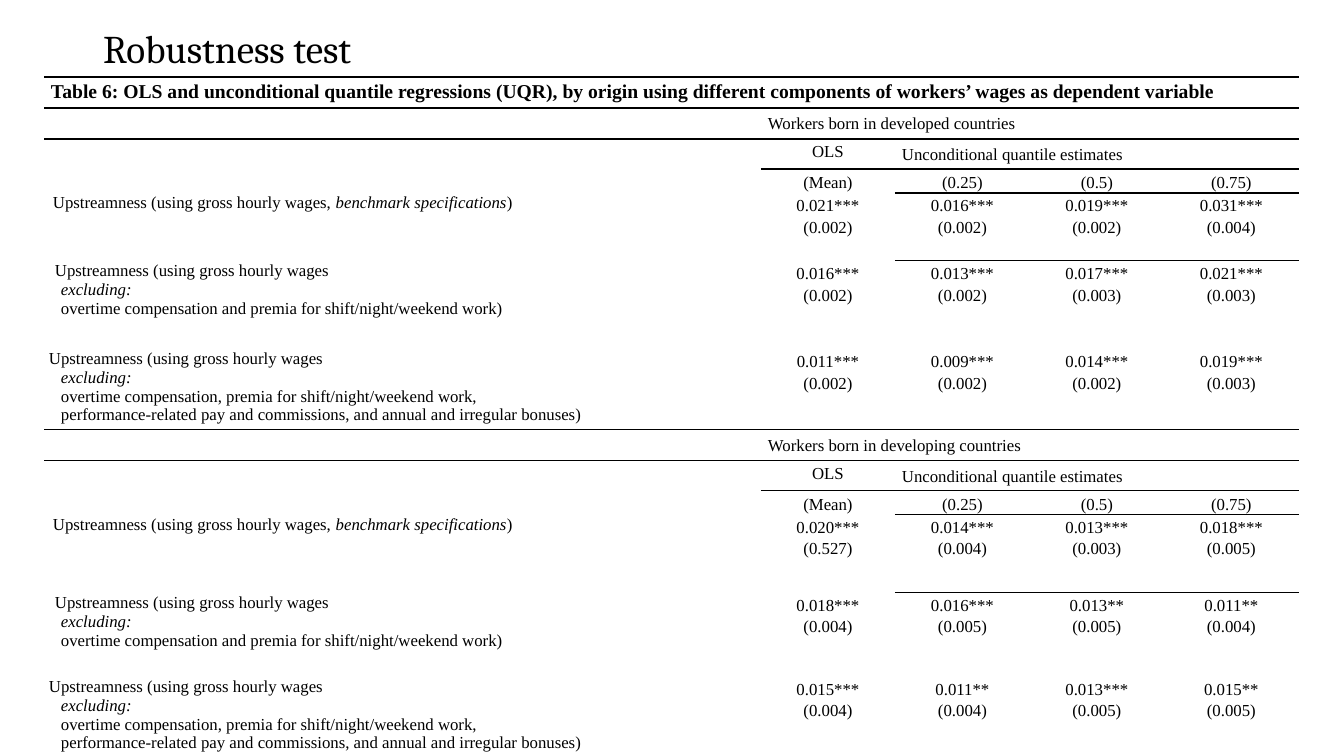
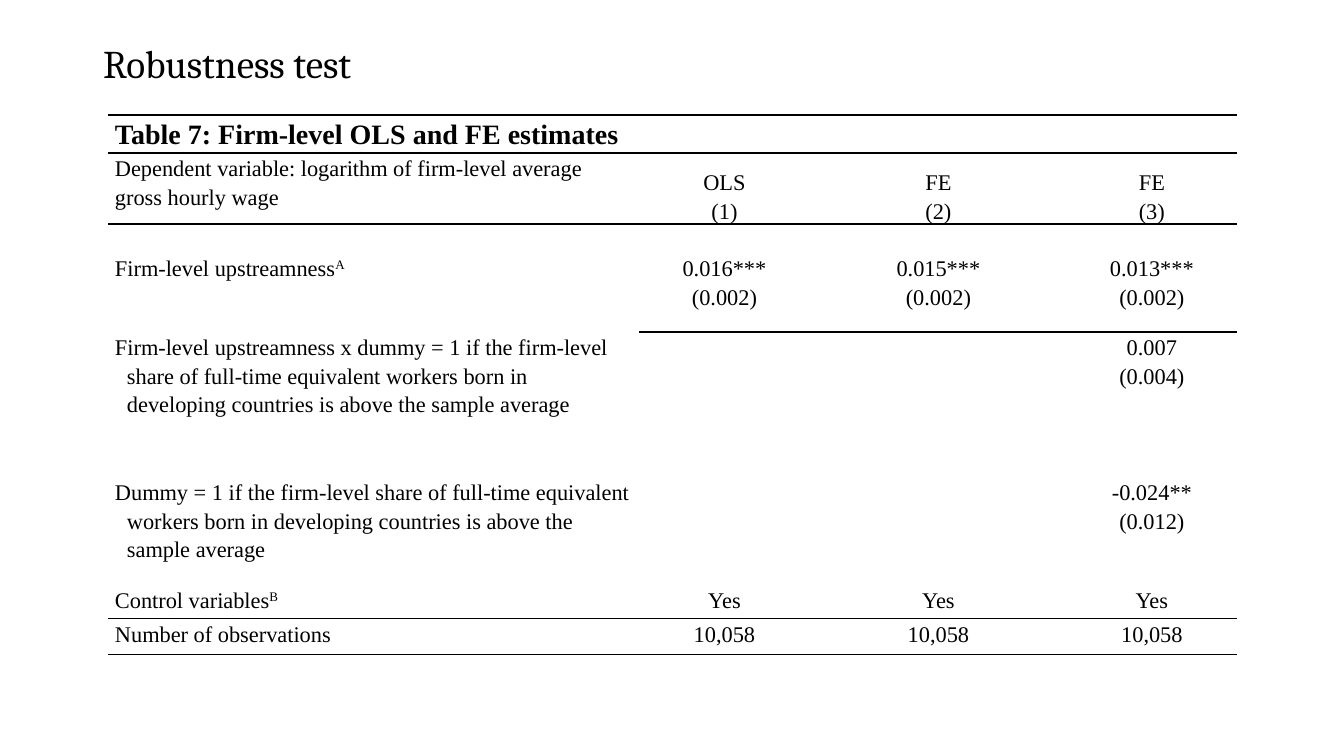
from dataclasses import dataclass

from lxml import etree
from pptx import Presentation
from pptx.dml.color import RGBColor
from pptx.enum.text import MSO_ANCHOR, MSO_AUTO_SIZE, PP_ALIGN
from pptx.oxml.ns import qn
from pptx.util import Pt

TOP, MIDDLE, BOTTOM = MSO_ANCHOR.TOP, MSO_ANCHOR.MIDDLE, MSO_ANCHOR.BOTTOM
LEFT, CENTER = PP_ALIGN.LEFT, PP_ALIGN.CENTER
NO_AUTOFIT = MSO_AUTO_SIZE.NONE
NO_STYLE_NO_GRID = "{2D5ABB26-0587-4C30-8999-92F81FD0307C}"
ITALIC = ("i", "1")
SUPERSCRIPT = ("baseline", "30000")
EMU_PER_PX = 914400 / 100.8


@dataclass(frozen=True)
class Theme:
    ink: str = "000000"
    title_font: str = "Cambria"
    table_font: str = "Times New Roman"
    title: int = 28
    caption_wide: int = 14
    body_wide: int = 12
    caption_firm: int = 20
    body_firm: int = 16
    rule: int = 1


THEME = Theme()


def add_table_slide(title_top, left, top, widths, heights, rules, insets):
    slide = presentation.slides.add_slide(presentation.slide_layouts[5])
    title = slide.shapes.title
    title.left, title.top, title.width, title.height = [
        round(value * EMU_PER_PX) for value in (93, title_top, 1159, 75)]
    frame = title.text_frame
    frame.text = "Robustness test"
    frame.auto_size = NO_AUTOFIT
    frame.vertical_anchor = TOP
    paragraph = frame.paragraphs[0]
    paragraph.alignment = LEFT
    paragraph.line_spacing = 0.9
    font = paragraph.runs[0].font
    font.name, font.size = THEME.title_font, Pt(THEME.title)
    font.color.rgb = RGBColor.from_string(THEME.ink)

    box = [round(value * EMU_PER_PX) for value in (left, top, sum(widths), sum(heights))]
    table = slide.shapes.add_table(len(heights), len(widths), *box).table
    table.first_row = table.horz_banding = False
    table._tbl.tblPr.find(qn("a:tableStyleId")).text = NO_STYLE_NO_GRID
    for column, width in zip(table.columns, widths):
        column.width = round(width * EMU_PER_PX)
    for row_index, (row, height) in enumerate(zip(table.rows, heights)):
        row.height = round(height * EMU_PER_PX)
        for column_index, cell in enumerate(row.cells):
            properties = cell._tc.get_or_add_tcPr()
            for tag, edge in (("a:lnT", row_index), ("a:lnB", row_index + 1)):
                if column_index >= rules.get(edge, len(widths)):
                    line = etree.SubElement(properties, qn(tag), w=str(Pt(THEME.rule)))
                    fill = etree.SubElement(line, qn("a:solidFill"))
                    etree.SubElement(fill, qn("a:srgbClr"), val=THEME.ink)
            cell.fill.background()
            (cell.margin_left, cell.margin_top, cell.margin_right, cell.margin_bottom) = [
                round(value * EMU_PER_PX) for value in insets]
            end = etree.SubElement(cell.text_frame.paragraphs[0]._p, qn("a:endParaRPr"))
            end.set("sz", "1000")
    return table


def write_cell(cell, text, size, alignment=LEFT, anchor=TOP, spacing=1.15, bold=False,
               emphasis=ITALIC, indents=(), hanging=0, insets=None):
    frame = cell.text_frame
    cell.vertical_anchor = anchor
    if insets:
        (cell.margin_left, cell.margin_top, cell.margin_right, cell.margin_bottom) = [
            round(value * EMU_PER_PX) for value in insets]
    for index, line in enumerate(text.split("\n")):
        paragraph = frame.add_paragraph() if index else frame.paragraphs[0]
        paragraph.alignment = alignment
        paragraph.line_spacing = spacing
        if indents:
            properties = paragraph._p.get_or_add_pPr()
            properties.set("marL", str(round(indents[index] * EMU_PER_PX)))
            properties.set("indent", str(round(-hanging * EMU_PER_PX)))
        for position, piece in enumerate(line.split("|")):
            if not piece:
                continue
            run = paragraph.add_run()
            run.text = piece
            run.font.name, run.font.size, run.font.bold = THEME.table_font, Pt(size), bold
            run.font.color.rgb = RGBColor.from_string(THEME.ink)
            if position % 2:
                run._r.get_or_add_rPr().set(*emphasis)


presentation = Presentation()
presentation.slide_width = round(1344 * EMU_PER_PX)
presentation.slide_height = round(756 * EMU_PER_PX)

HEADER_INSETS = (7, 4, 7, 4)
wage_table = add_table_slide(
    title_top=25, left=44, top=77,
    widths=[717, 134, 135, 134, 135],
    heights=[31, 31, 30, 24, 68, 88, 81, 31, 30, 24, 78, 84, 81],
    rules={0: 0, 1: 0, 2: 1, 3: 2, 4: 2, 7: 0, 8: 1, 9: 2, 10: 2, 13: 0},
    insets=(5, 1, 5, 0))
wage_table.cell(0, 0).merge(wage_table.cell(0, 4))
write_cell(
    wage_table.cell(0, 0),
    "Table 6: OLS and unconditional quantile regressions (UQR), by origin using different "
    "components of workers’ wages as dependent variable",
    THEME.caption_wide, spacing=1.0, bold=True, insets=HEADER_INSETS)

wage_labels = [
    ("Upstreamness (using gross hourly wages, |benchmark specifications|)", (4,)),
    ("Upstreamness (using gross hourly wages\n|excluding:|\n"
     "overtime compensation and premia for shift/night/weekend work)", (6, 12, 12)),
    ("Upstreamness (using gross hourly wages\n|excluding:|\n"
     "overtime compensation, premia for shift/night/weekend work,\n"
     "performance-related pay and commissions, and annual and irregular bonuses)",
     (0, 12, 12, 12)),
]
wage_panels = [
    (1, "Workers born in developed countries", [
        ["0.021***\n(0.002)", "0.016***\n(0.002)", "0.019***\n(0.002)", "0.031***\n(0.004)"],
        ["0.016***\n(0.002)", "0.013***\n(0.002)", "0.017***\n(0.003)", "0.021***\n(0.003)"],
        ["0.011***\n(0.002)", "0.009***\n(0.002)", "0.014***\n(0.002)", "0.019***\n(0.003)"],
    ]),
    (7, "Workers born in developing countries", [
        ["0.020***\n(0.527)", "0.014***\n(0.004)", "0.013***\n(0.003)", "0.018***\n(0.005)"],
        ["0.018***\n(0.004)", "0.016***\n(0.005)", "0.013**\n(0.005)", "0.011**\n(0.004)"],
        ["0.015***\n(0.004)", "0.011**\n(0.004)", "0.013***\n(0.005)", "0.015**\n(0.005)"],
    ]),
]
for first_row, origin, estimates in wage_panels:
    for row, column, heading in ((first_row, 1, origin),
                                 (first_row + 1, 2, "Unconditional quantile estimates")):
        wage_table.cell(row, column).merge(wage_table.cell(row, 4))
        write_cell(wage_table.cell(row, column), heading, THEME.body_wide, insets=HEADER_INSETS)
    write_cell(wage_table.cell(first_row + 1, 1), "OLS", THEME.body_wide, CENTER)
    for column, heading in enumerate(["(Mean)", "(0.25)", "(0.5)", "(0.75)"], 1):
        write_cell(wage_table.cell(first_row + 2, column), heading, THEME.body_wide,
                   CENTER, MIDDLE)
    for row, ((label, indents), values) in enumerate(zip(wage_labels, estimates), first_row + 3):
        write_cell(wage_table.cell(row, 0), label, THEME.body_wide, spacing=1.0, indents=indents)
        for column, value in enumerate(values, 1):
            write_cell(wage_table.cell(row, column), value, THEME.body_wide, CENTER)

firm_table = add_table_slide(
    title_top=40, left=108, top=115,
    widths=[531, 171, 257, 170],
    heights=[38, 71, 108, 145, 108, 34, 36],
    rules={0: 0, 1: 0, 2: 1, 6: 0, 7: 0},
    insets=(7, 0, 7, 0))
firm_table.cell(0, 0).merge(firm_table.cell(0, 3))
write_cell(firm_table.cell(0, 0), "Table 7: Firm-level OLS and FE estimates",
           THEME.caption_firm, bold=True)

firm_rows = [
    ("Dependent variable: logarithm of firm-level average gross hourly wage", 0,
     ["OLS\n(1)", "FE\n(2)", "FE\n(3)"]),
    ("Firm-level upstreamness|A|", 0,
     ["0.016***\n(0.002)", "0.015***\n(0.002)", "0.013***\n(0.002)"]),
    ("Firm-level upstreamness x dummy = 1 if the firm-level share of full-time equivalent "
     "workers born in developing countries is above the sample average", 12,
     ["", "", "0.007\n(0.004)"]),
    ("Dummy = 1 if the firm-level share of full-time equivalent workers born in developing "
     "countries is above the sample average", 12,
     ["", "", "-0.024**\n(0.012)"]),
    ("Control variables|B|", 0, ["Yes"] * 3),
    ("Number of observations", 0, ["10,058"] * 3),
]
for row, (label, hanging, values) in enumerate(firm_rows, 1):
    insets = (7, 29, 7, 0) if row == 2 else None
    write_cell(firm_table.cell(row, 0), label, THEME.body_firm, emphasis=SUPERSCRIPT,
               indents=(hanging,), hanging=hanging, insets=insets)
    for column, value in enumerate(values, 1):
        write_cell(firm_table.cell(row, column), value, THEME.body_firm, CENTER,
                   BOTTOM if row == 1 else TOP, insets=insets)

presentation.save("out.pptx")
